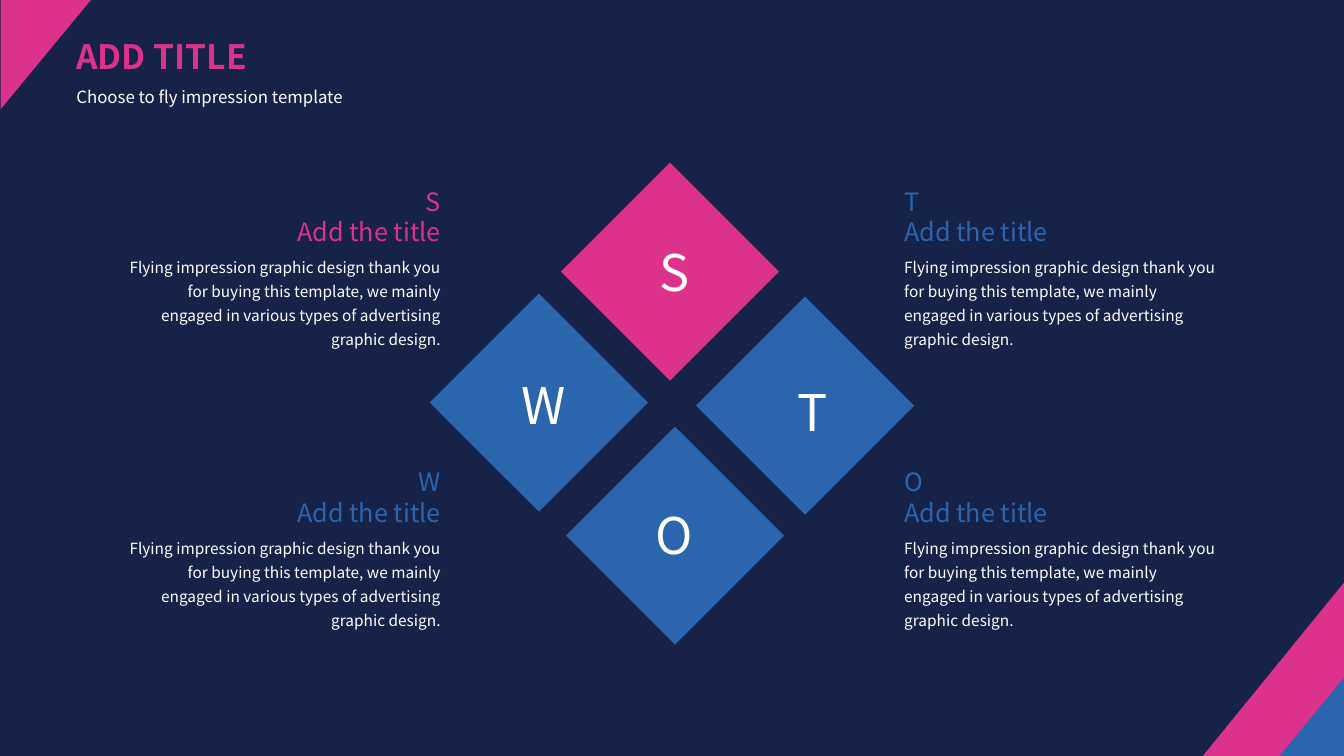
from pptx import Presentation
from pptx.dml.color import RGBColor
from pptx.enum.shapes import MSO_SHAPE
from pptx.enum.text import MSO_AUTO_SIZE, PP_ALIGN
from pptx.util import Inches, Pt

NAVY = RGBColor(0x16, 0x22, 0x48)
PINK = RGBColor(0xDC, 0x32, 0x8B)
BLUE = RGBColor(0x2B, 0x65, 0xAE)
WHITE = RGBColor(0xFF, 0xFF, 0xFF)
LEFT, CENTER, RIGHT = PP_ALIGN.LEFT, PP_ALIGN.CENTER, PP_ALIGN.RIGHT
SQUARE, WEDGE = MSO_SHAPE.RECTANGLE, MSO_SHAPE.ISOSCELES_TRIANGLE
GROW = MSO_AUTO_SIZE.SHAPE_TO_FIT_TEXT
FONT = "Noto Sans CJK SC"
WIDTH, HEIGHT = 13.33, 7.5
SIDE = 1.53
BODY = ("Flying impression graphic design thank you for buying this template, "
        "we mainly engaged in various types of advertising graphic design.")


def add_text(slide, box, text, size, color=WHITE, align=LEFT, bold=False,
             spacing=None, wrap=True):
    frame = slide.shapes.add_textbox(*map(Inches, box)).text_frame
    frame.word_wrap = wrap
    frame.auto_size = GROW
    frame.text = text
    for para in frame.paragraphs:
        para.alignment = align
        if spacing:
            para.line_spacing = spacing
        font = para.runs[0].font
        font.name, font.size, font.bold = FONT, Pt(size), bold
        font.color.rgb = color


def paint(shape, color):
    shape.shadow.inherit = False
    shape.fill.solid()
    shape.fill.fore_color.rgb = color
    shape.line.fill.background()


def add_shape(slide, kind, box, color, turn):
    shape = slide.shapes.add_shape(kind, *map(Inches, box))
    shape.rotation = turn
    paint(shape, color)
    return shape


def add_poly(slide, points, color):
    start, *rest = [(Inches(x), Inches(y)) for x, y in points]
    maker = slide.shapes.build_freeform(*start)
    maker.add_line_segments(rest)
    paint(maker.convert_to_shape(), color)


def add_header(slide, left, top):
    add_text(slide, (left, top, 1.98, 0.5), "ADD TITLE", 24, PINK,
             bold=True, wrap=False)
    add_text(slide, (left, top + 0.44, 3.5, 0.36),
             "Choose to fly impression template", 12, spacing=1.3)


def add_corners(slide):
    wedge = add_shape(slide, WEDGE, (-0.09, 0.09, 1.09, 0.9), PINK, 90)
    wedge.adjustments[0] = 0
    add_poly(slide, [(WIDTH, 6.31), (WIDTH, HEIGHT), (12.36, HEIGHT)], BLUE)
    add_poly(slide, [(WIDTH, 5.78), (WIDTH, 6.72), (12.69, HEIGHT),
                     (11.93, HEIGHT)], PINK)


def add_diamond(slide, left, top, letter, color, shift, drop):
    add_shape(slide, SQUARE, (left, top, SIDE, SIDE), color, 45)
    width = 0.8
    add_text(slide, (left + (SIDE - width) / 2 + shift, top + drop, width, 0.7),
             letter, 36, align=CENTER)


def add_note(slide, left, top, letter, color, align):
    width, head = 3.34, 1.85
    start = left + width - head if align == RIGHT else left
    add_text(slide, (start, top, head, 0.7), f"{letter}\nAdd the title", 18,
             color, align)
    add_text(slide, (left, top + 0.66, width, 1.05), BODY, 11,
             align=align, spacing=1.3)


def main():
    deck = Presentation()
    deck.slide_width, deck.slide_height = Inches(WIDTH), Inches(HEIGHT)
    slide = deck.slides.add_slide(deck.slide_layouts[6])
    slide.background.fill.solid()
    slide.background.fill.fore_color.rgb = NAVY

    add_header(slide, 0.66, 0.31)
    for left, top, letter, color, shift, drop in (
            (5.88, 1.93, "S", PINK, 0.05, 0.41),
            (7.22, 3.26, "T", BLUE, 0.07, 0.47),
            (5.93, 4.55, "O", BLUE, -0.01, 0.4),
            (4.58, 3.23, "W", BLUE, 0.05, 0.43)):
        add_diamond(slide, left, top, letter, color, shift, drop)
    for left, align, letters in ((8.87, LEFT, "TO"), (1.13, RIGHT, "SW")):
        for row, letter in enumerate(letters):
            color = PINK if letter == "S" else BLUE
            add_note(slide, left, 1.8 + 2.78 * row, letter, color, align)
    add_corners(slide)
    deck.save("out.pptx")


if __name__ == "__main__":
    main()
